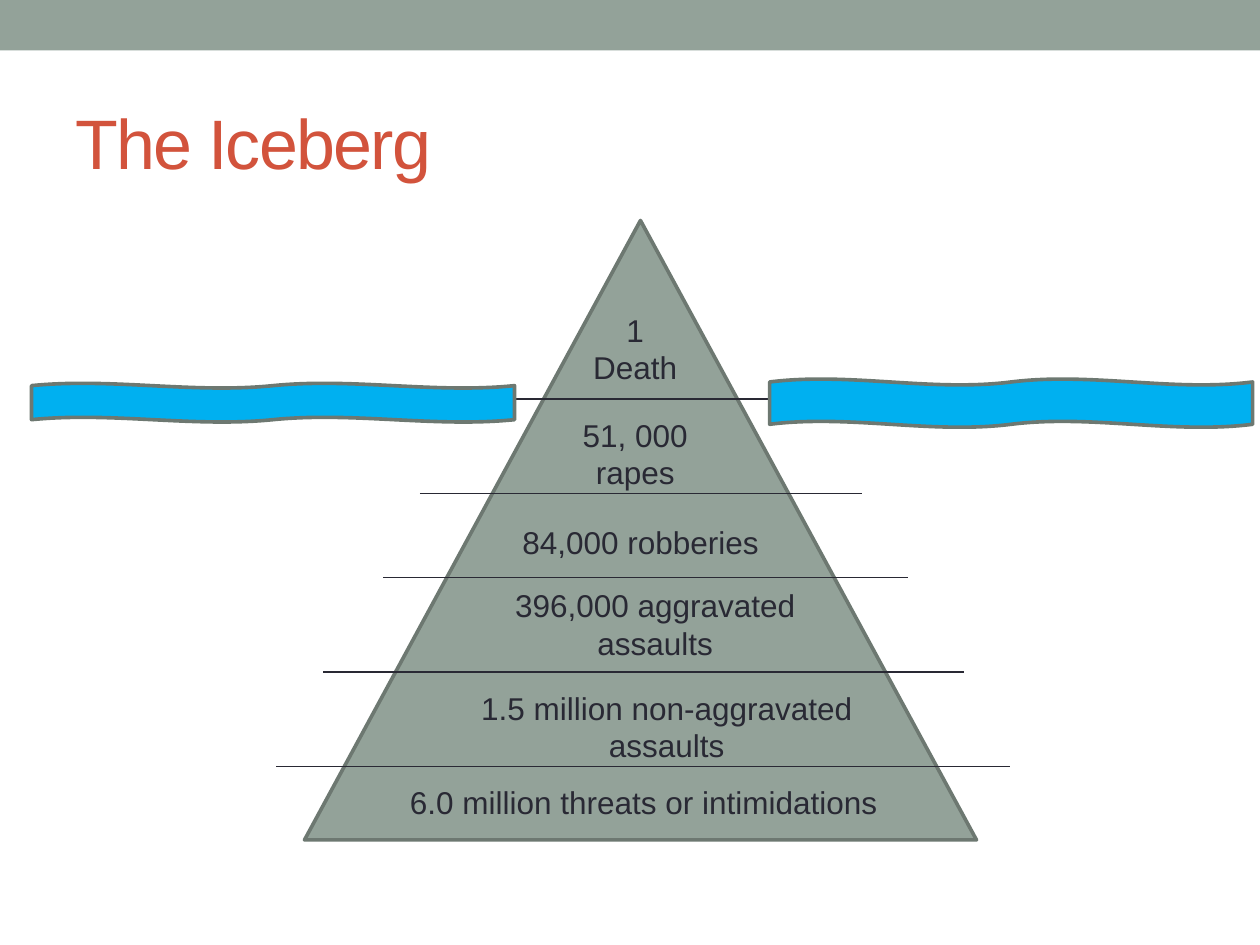
"""Build the iceberg slide on a grid of 120 columns by 90 rows."""
from lxml import etree
from pptx import Presentation
from pptx import util as u
from pptx.dml.color import RGBColor
from pptx.enum import shapes, text
from pptx.oxml.ns import qn

SAGE = RGBColor(0x93, 0xA2, 0x99)
EDGE = RGBColor(0x6D, 0x78, 0x71)
INK = RGBColor(0x29, 0x29, 0x34)
RUST = RGBColor(0xD2, 0x53, 0x3C)
SEA = RGBColor(0x00, 0xB0, 0xF0)

deck = Presentation()
deck.slide_width, deck.slide_height = u.Inches(10), u.Inches(7.5)
cell = deck.slide_width / 120
slide = deck.slides.add_slide(deck.slide_layouts[6])
items = slide.shapes


def shape(kind, box, fill, edge=None):
    item = items.add_shape(kind, *(round(n * cell) for n in box))
    item.shadow.inherit = False
    item.fill.solid()
    item.fill.fore_color.rgb = fill
    if edge is None:
        item.line.fill.background()
    else:
        item.line.color.rgb = edge
        item.line.width = u.Pt(2.08)


def label(words, box, size, color, align):
    item = items.add_textbox(*(round(n * cell) for n in box))
    frame = item.text_frame
    frame.word_wrap = True
    para = frame.paragraphs[0]
    para.text = words
    para.alignment = align
    para.font.name = "Arial"
    para.font.size = u.Pt(size)
    para.font.color.rgb = color
    return frame


kinds = shapes.MSO_SHAPE
shape(kinds.RECTANGLE, (0, 0, 120, 4.8), SAGE)
title = label("The Iceberg", (6, 7, 108, 13), 40, RUST, text.PP_ALIGN.LEFT)
title.vertical_anchor = text.MSO_ANCHOR.MIDDLE
title.paragraphs[0].runs[0].font._element.set("spc", "-100")

shape(kinds.ISOSCELES_TRIANGLE, (29, 21, 64, 59), SAGE, EDGE)

for left, right, row in [
    (42.7, 79.2, 38),
    (40, 82.1, 47),
    (36.5, 86.5, 55),
    (30.8, 91.8, 64),
    (26.3, 96.2, 73),
]:
    ends = (round(n * cell) for n in (left, row, right, row))
    line = items.add_connector(shapes.MSO_CONNECTOR.STRAIGHT, *ends)
    line.line.color.rgb = INK
    line.line.width = u.Pt(0.75)
    etree.SubElement(line._element.spPr, qn("a:effectLst"))

for words, box in [
    ("1 Death", (55, 29, 11, 8.5)),
    ("51, 000 rapes", (51, 39, 19, 5)),
    ("84,000 robberies", (47, 49.2, 28, 4.8)),
    ("396,000 aggravated assaults", (42.7, 55.2, 39.4, 4.8)),
    ("1.5 million non-aggravated assaults", (39, 65, 49, 4.8)),
    ("6.0 million threats or intimidations", (36.8, 74, 49, 4.8)),
]:
    label(words, box, 18, INK, text.PP_ALIGN.CENTER)

for box in [(3, 36.5, 46, 3.7), (73.3, 36.1, 46, 4.6)]:
    shape(kinds.DOUBLE_WAVE, box, SEA, EDGE)

deck.save("out.pptx")
